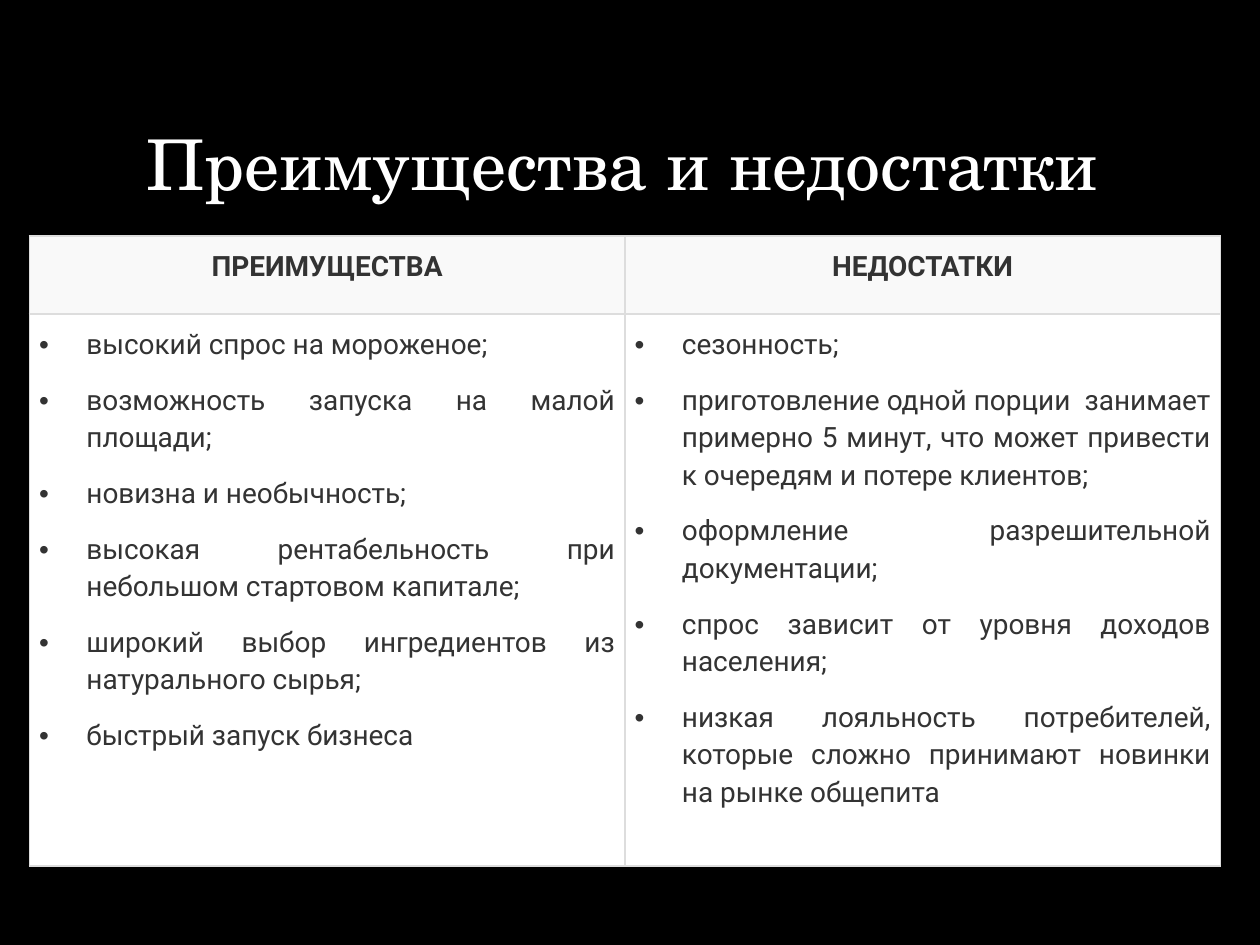
from lxml import etree
from pptx import Presentation
from pptx.dml.color import RGBColor
from pptx.enum.text import MSO_ANCHOR, PP_ALIGN
from pptx.oxml.ns import qn
from pptx.util import Pt

BOTTOM = MSO_ANCHOR.BOTTOM
CENTER, JUSTIFY = PP_ALIGN.CENTER, PP_ALIGN.JUSTIFY

COLORS = {
    "background": "000000",
    "title": "FFFFFF",
    "text": "333333",
    "header": "F9F9F9",
    "body": "FFFFFF",
    "border": "DDDDDD",
}
TITLE_FONT, TABLE_FONT = "TeX Gyre Schola", "Roboto"

TITLE = "Преимущества и недостатки"
COLUMNS = {
    "ПРЕИМУЩЕСТВА": [
        "высокий спрос на мороженое;",
        "возможность запуска на малой площади;",
        "новизна и необычность;",
        "высокая рентабельность при небольшом стартовом капитале;",
        "широкий выбор ингредиентов из натурального сырья;",
        "быстрый запуск бизнеса",
    ],
    "НЕДОСТАТКИ": [
        "сезонность;",
        "приготовление одной порции  занимает примерно 5 минут, "
        "что может привести к очередям и потере клиентов;",
        "оформление разрешительной документации;",
        "спрос зависит от уровня доходов населения;",
        "низкая лояльность потребителей, которые сложно принимают "
        "новинки на рынке общепита",
    ],
}


def color(name):
    return RGBColor.from_string(COLORS[name])


def style_text(paragraph, font_name, size, color_name, bold=False):
    for span in paragraph.runs:
        span.font.name = font_name
        span.font.size = Pt(size)
        span.font.bold = bold
        span.font.color.rgb = color(color_name)


def add_title(page):
    box = page.shapes.add_textbox(Pt(76.7), Pt(30.2), Pt(567.4), Pt(90))
    frame = box.text_frame
    frame.word_wrap = True
    frame.vertical_anchor = BOTTOM
    frame.text = TITLE
    paragraph = frame.paragraphs[0]
    paragraph.line_spacing = 0.8
    style_text(paragraph, TITLE_FONT, 40, "title")


def set_borders(cell):
    properties = cell._tc.get_or_add_tcPr()
    for index, side in enumerate(("lnL", "lnR", "lnT", "lnB")):
        line = etree.Element(qn(f"a:{side}"), w=str(Pt(1)))
        fill = etree.SubElement(line, qn("a:solidFill"))
        etree.SubElement(fill, qn("a:srgbClr"), val=COLORS["border"])
        properties.insert(index, line)


def set_bullet(paragraph):
    properties = paragraph._p.get_or_add_pPr()
    properties.set("marL", str(Pt(27)))
    properties.set("indent", str(Pt(-27)))
    etree.SubElement(properties, qn("a:buFont"), typeface="Arial")
    etree.SubElement(properties, qn("a:buChar"), char="•")
    tabs = etree.SubElement(properties, qn("a:tabLst"))
    etree.SubElement(tabs, qn("a:tab"), pos=str(Pt(36)), algn="l")


def fill_cell(cell, lines, fill_name, header=False):
    cell.margin_left = cell.margin_right = Pt(5.6)
    cell.margin_top = cell.margin_bottom = Pt(5.6)
    cell.fill.solid()
    cell.fill.fore_color.rgb = color(fill_name)
    set_borders(cell)
    cell.text_frame.text = "\n".join(lines)
    for index, paragraph in enumerate(cell.text_frame.paragraphs):
        if not header:
            set_bullet(paragraph)
            paragraph.space_after = Pt(6)
            if index:
                paragraph.space_before = Pt(4.5)
        paragraph.alignment = CENTER if header else JUSTIFY
        paragraph.line_spacing = 1.15
        style_text(paragraph, TABLE_FONT, 16, "text", bold=header)


def add_comparison(page):
    frame = page.shapes.add_table(
        2, len(COLUMNS), Pt(16.8), Pt(134.8), Pt(680.6), Pt(360))
    table = frame.table
    table.horz_banding = False
    table.rows[0].height = Pt(44.6)
    table.rows[1].height = Pt(315.4)
    for index, (heading, points) in enumerate(COLUMNS.items()):
        fill_cell(table.cell(0, index), [heading], "header", header=True)
        fill_cell(table.cell(1, index), points, "body")


def main():
    deck = Presentation()
    deck.slide_width, deck.slide_height = Pt(720), Pt(540)
    page = deck.slides.add_slide(deck.slide_layouts[6])

    # Black background
    page.background.fill.solid()
    page.background.fill.fore_color.rgb = color("background")

    # Heading and two-column comparison
    add_title(page)
    add_comparison(page)
    deck.save("out.pptx")


if __name__ == "__main__":
    main()
